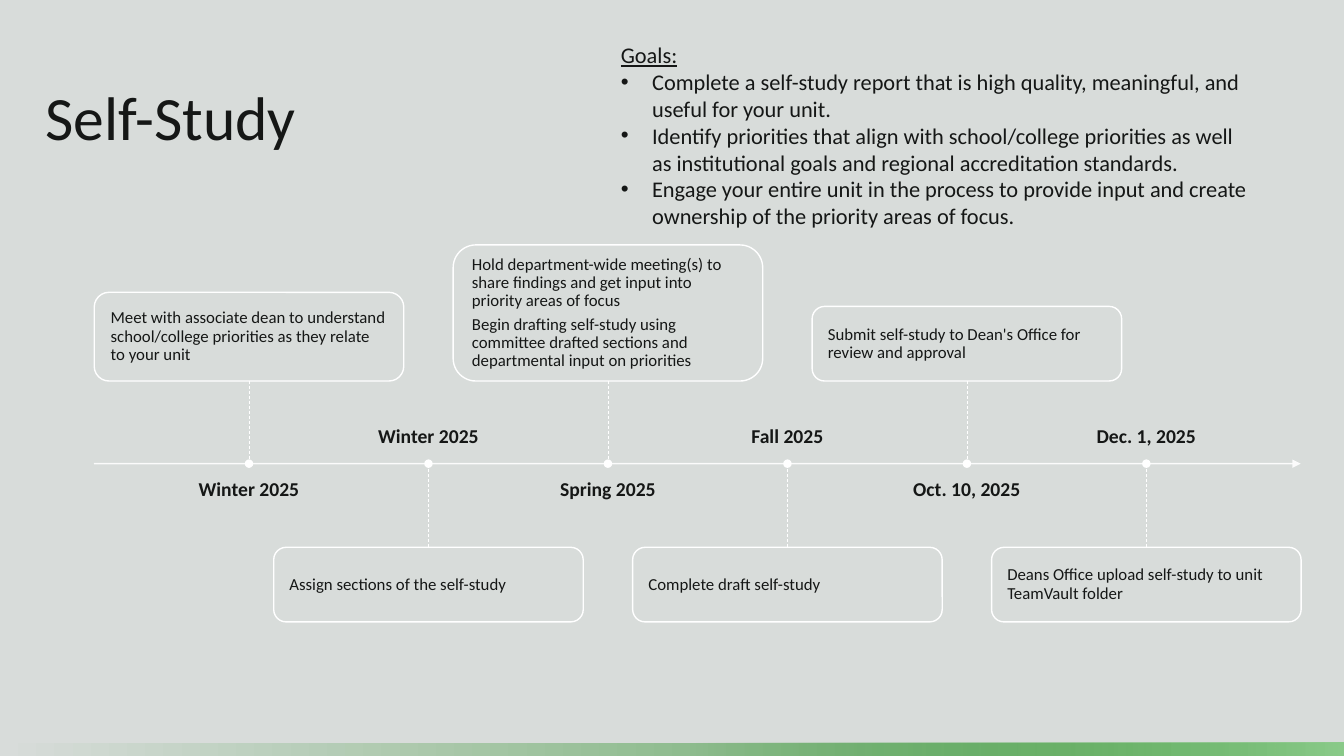
"""Build the Self-Study timeline slide."""
from lxml import etree
from pptx import Presentation
from pptx.dml.color import RGBColor
from pptx.enum.dml import MSO_LINE
from pptx.enum.shapes import MSO_CONNECTOR, MSO_SHAPE
from pptx.enum.text import MSO_ANCHOR, PP_ALIGN
from pptx.oxml.ns import qn
from pptx.util import Inches, Pt

RECT, ROUND, OVAL = MSO_SHAPE.RECTANGLE, MSO_SHAPE.ROUNDED_RECTANGLE, MSO_SHAPE.OVAL
STRAIGHT, DASH = MSO_CONNECTOR.STRAIGHT, MSO_LINE.DASH
TOP, MIDDLE, BOTTOM = MSO_ANCHOR.TOP, MSO_ANCHOR.MIDDLE, MSO_ANCHOR.BOTTOM
LEFT, CENTER = PP_ALIGN.LEFT, PP_ALIGN.CENTER

GREY = RGBColor(0xD8, 0xDC, 0xDA)
INK = RGBColor(0x15, 0x17, 0x16)
WHITE = RGBColor(0xFF, 0xFF, 0xFF)
GREEN = RGBColor(0x48, 0x9D, 0x46)
LIGHT_GREEN = RGBColor(0x8B, 0xCB, 0x8A)

GOALS = [
    "Complete a self-study report that is high quality, meaningful, and useful for your unit.",
    "Identify priorities that align with school/college priorities as well as institutional "
    "goals and regional accreditation standards.",
    "Engage your entire unit in the process to provide input and create ownership of the "
    "priority areas of focus.",
]
STEPS = [
    ("Winter 2025", 0.88, ["Meet with associate dean to understand school/college priorities "
                           "as they relate to your unit"]),
    ("Winter 2025", 0.74, ["Assign sections of the self-study"]),
    ("Spring 2025", 1.35, ["Hold department-wide meeting(s) to share findings and get input "
                           "into priority areas of focus",
                           "Begin drafting self-study using committee drafted sections and "
                           "departmental input on priorities"]),
    ("Fall 2025", 0.74, ["Complete draft self-study"]),
    ("Oct. 10, 2025", 0.74, ["Submit self-study to Dean's Office for review and approval"]),
    ("Dec. 1, 2025", 0.74, ["Deans Office upload self-study to unit TeamVault folder"]),
]
FIRST_X, STEP_X, AXIS_Y = 2.47, 1.78, 4.6
BOX_W, LABEL_W, LABEL_H, DOT = 3.07, 2.7, 0.49, 0.07
UPPER_BOTTOM, LOWER_TOP = 3.78, 5.43


class Slide:
    """Holds the style and the current slide."""

    font = "Calibri"

    def __init__(self, prs):
        self.s = prs.slides.add_slide(prs.slide_layouts[6])
        self.s.background.fill.solid()
        self.s.background.fill.fore_color.rgb = GREY

    def alpha(self, sp, percent):
        """Set the opacity of the first colour in the shape."""
        color = next(sp._element.spPr.iter(qn("a:srgbClr")))
        etree.SubElement(color, qn("a:alpha"), val=str(percent * 1000))

    def frame(self, sp, anchor, inset=None):
        """Prepare the text frame of a shape."""
        tf = sp.text_frame
        tf.word_wrap = True
        tf.vertical_anchor = anchor
        if inset is not None:
            tf.margin_left = tf.margin_right = tf.margin_top = tf.margin_bottom = Inches(inset)
        return tf

    def fill_text(self, tf, texts, size, bold=False, align=LEFT, spacing=0.9, after=0.35):
        """Add one paragraph per text and return the paragraphs."""
        for i, text in enumerate(texts):
            p = tf.add_paragraph() if i else tf.paragraphs[0]
            p.alignment = align
            p.line_spacing = spacing
            p.space_after = Pt(size * after)
            r = p.add_run()
            r.text = text
            r.font.name, r.font.size, r.font.bold = self.font, Pt(size), bold
            r.font.color.rgb = INK
        return tf.paragraphs

    def text(self, x, y, w, h, anchor=TOP, inset=None):
        """Add a text box and return its frame."""
        sp = self.s.shapes.add_textbox(Inches(x), Inches(y), Inches(w), Inches(h))
        return self.frame(sp, anchor, inset)

    def shape(self, kind, x, y, w, h, fill=None):
        """Add a preset shape, with a white outline when it has a fill."""
        sp = self.s.shapes.add_shape(kind, Inches(x), Inches(y), Inches(w), Inches(h))
        sp.shadow.inherit = False
        if fill is None:
            sp.line.fill.background()
        else:
            sp.fill.solid()
            sp.fill.fore_color.rgb = fill
            sp.line.color.rgb = WHITE
            sp.line.width = Pt(1)
        return sp

    def band(self, x, w, start, end):
        """Add a gradient band along the bottom edge."""
        sp = self.shape(RECT, x, 7.37, w, 0.13)
        sp.fill.gradient()
        sp.fill.gradient_angle = 0
        for stop, color in zip(sp.fill.gradient_stops, (start, end)):
            stop.color.rgb = color
        return sp

    def box(self, x, y, h, texts):
        """Add a rounded box centred on x."""
        sp = self.shape(ROUND, x - BOX_W / 2, y, BOX_W, h, GREY)
        self.alpha(sp, 90)
        self.fill_text(self.frame(sp, MIDDLE, 0.12), texts, 12)
        return sp

    def line(self, x1, y1, x2, y2, width):
        """Add a white straight line."""
        cx = self.s.shapes.add_connector(STRAIGHT, Inches(x1), Inches(y1), Inches(x2), Inches(y2))
        cx.line.color.rgb = WHITE
        cx.line.width = Pt(width)
        etree.SubElement(cx._element.spPr, qn("a:effectLst"))
        return cx

    def arrow(self, x1, y1, x2, y2):
        """Add a line with a triangle at its end."""
        cx = self.line(x1, y1, x2, y2, 1)
        self.alpha(cx, 90)
        etree.SubElement(cx._element.spPr.find(qn("a:ln")), qn("a:tailEnd"), type="triangle")

    def bullet(self, p):
        """Give a paragraph a hanging bullet."""
        pPr = p._p.get_or_add_pPr()
        pPr.set("marL", str(Inches(0.31)))
        pPr.set("indent", str(-Inches(0.31)))
        etree.SubElement(pPr, qn("a:buFont"), typeface="Arial")
        etree.SubElement(pPr, qn("a:buChar"), char="•")

    def step(self, x, upper, label, h, texts):
        """Add one timeline step above or below the axis."""
        box = self.box(x, UPPER_BOTTOM - h if upper else LOWER_TOP, h, texts)
        stem = self.line(x, UPPER_BOTTOM if upper else LOWER_TOP, x, AXIS_Y, 0.5)
        stem.line.dash_style = DASH
        stem.begin_connect(box, 2 if upper else 0)
        self.shape(OVAL, x - DOT / 2, AXIS_Y - DOT / 2, DOT, DOT, WHITE)
        y, anchor = (4.76, TOP) if upper else (3.95, BOTTOM)
        tf = self.text(x - LABEL_W / 2, y, LABEL_W, LABEL_H, anchor, 0)
        self.fill_text(tf, [label], 14, True, CENTER)


def main():
    prs = Presentation()
    prs.slide_width, prs.slide_height = Inches(13.33), Inches(7.5)
    s = Slide(prs)
    s.band(0, 13.33, GREY, GREEN)
    s.alpha(s.band(6.87, 6.46, GREEN, LIGHT_GREEN), 0)

    s.fill_text(s.text(0.35, 0.46, 5.05, 1.47, MIDDLE), ["Self-Study"], 44, after=0)
    tf = s.text(6.06, 0.36, 6.47, 2.26)
    goals = s.fill_text(tf, ["Goals:"] + GOALS, 16, spacing=1.0, after=0)
    goals[0].runs[0].font.underline = True
    for p in goals[1:]:
        s.bullet(p)

    s.arrow(0.93, AXIS_Y, 12.9, AXIS_Y)
    for i, (label, h, texts) in enumerate(STEPS):
        s.step(FIRST_X + i * STEP_X, i % 2 == 0, label, h, texts)
    prs.save("out.pptx")


if __name__ == "__main__":
    main()
